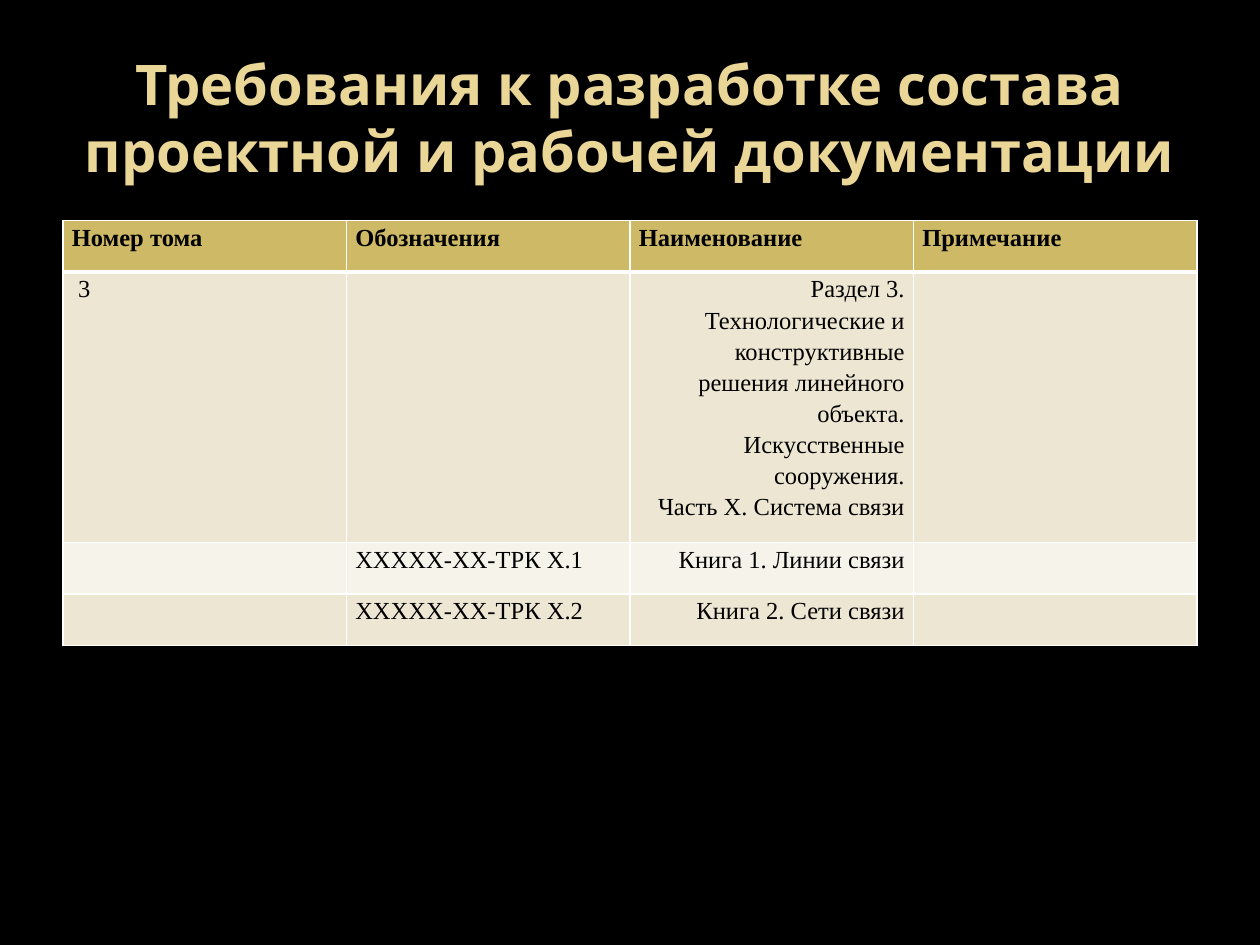
from lxml.etree import SubElement
from pptx import Presentation
from pptx.dml.color import RGBColor
from pptx.enum.text import MSO_ANCHOR, PP_ALIGN
from pptx.oxml.ns import qn
from pptx.util import Inches, Pt

# Content
TITLE = "Требования к разработке состава проектной и рабочей документации"
ROWS = [
    ["Номер тома", "Обозначения", "Наименование", "Примечание"],
    ["3", "",
     "Раздел 3. Технологические и конструктивные решения линейного объекта.\n"
     "Искусственные сооружения.\nЧасть Х. Система связи", ""],
    ["", "ХХХХХ-ХХ-ТРК Х.1", "Книга 1. Линии связи", ""],
    ["", "ХХХХХ-ХХ-ТРК Х.2", "Книга 2. Сети связи", ""],
]
HUES = {"back": "000000", "title": "EAD696", "text": "000000", "line": "FFFFFF",
        "head": "CEB966", "odd": "EDE6D3", "even": "F6F3EA"}

# Layout
WIDE, HIGH = 10, 7.5
EDGE = WIDE * 0.05
SPAN = WIDE - 2 * EDGE
TALL = [0.41, 1.97, 0.41, 0.41]


def hue(name):
    return RGBColor.from_string(HUES[name])


def write(frame, text, size=14, font="Times New Roman", color="text",
          bold=False, align=PP_ALIGN.JUSTIFY, space=1.15):
    for i, line in enumerate(text.split("\n")):
        para = frame.add_paragraph() if i else frame.paragraphs[0]
        para.alignment = align
        para.line_spacing = space
        run = para.add_run()
        run.text = line
        run.font.size = Pt(size)
        run.font.name = font
        run.font.bold = bold
        run.font.color.rgb = hue(color)


def border(cell, low):
    props = cell._tc.get_or_add_tcPr()
    for side, width in zip("LRTB", (1, 1, 1, low)):
        line = SubElement(props, qn(f"a:ln{side}"), w=str(Pt(width)))
        fill = SubElement(line, qn("a:solidFill"))
        SubElement(fill, qn("a:srgbClr"), val=HUES["line"])


deck = Presentation()
deck.slide_width, deck.slide_height = Inches(WIDE), Inches(HIGH)
slide = deck.slides.add_slide(deck.slide_layouts[6])
slide.background.fill.solid()
slide.background.fill.fore_color.rgb = hue("back")

# Title
box = slide.shapes.add_textbox(Inches(EDGE), Inches(0.3), Inches(SPAN), Inches(1.25))
frame = box.text_frame
frame.word_wrap = True
frame.vertical_anchor = MSO_ANCHOR.MIDDLE
write(frame, TITLE, size=32, font="Noto Sans", color="title", bold=True,
      align=PP_ALIGN.CENTER, space=1.0)

# Table
table = slide.shapes.add_table(len(ROWS), len(ROWS[0]), Inches(EDGE), Inches(1.75),
                               Inches(SPAN), Inches(sum(TALL))).table
for r, row in enumerate(ROWS):
    table.rows[r].height = Inches(TALL[r])
    for c, text in enumerate(row):
        cell = table.cell(r, c)
        border(cell, 1 if r else 3)
        cell.fill.solid()
        cell.fill.fore_color.rgb = hue("head" if r == 0 else "odd" if r % 2 else "even")
        if text:
            cell.margin_left = cell.margin_right = Inches(0.12 if r and c == 0 else 0.07)
            cell.margin_top = cell.margin_bottom = 0
            write(cell.text_frame, text, bold=r == 0,
                  align=PP_ALIGN.RIGHT if r and c == 2 else PP_ALIGN.JUSTIFY)
        # The rule under the header is shared with the row below
        if r == 1:
            cell._tc.tcPr.find(qn("a:lnT")).set("w", str(Pt(3)))

deck.save("out.pptx")
